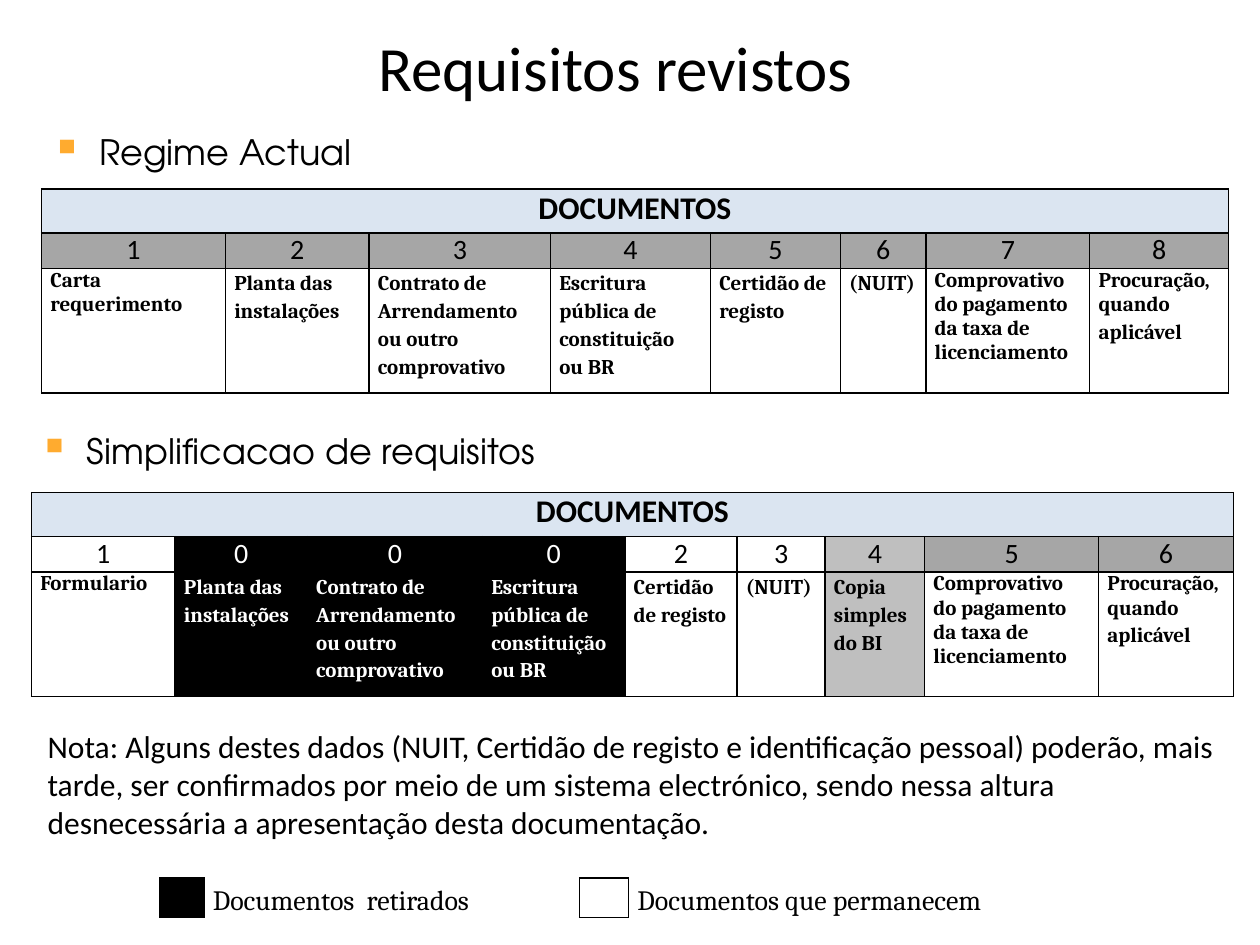
from lxml import etree
from pptx import Presentation
from pptx.dml.color import RGBColor
from pptx.enum import text as t
from pptx.oxml import ns
from pptx.util import Inches, Pt

BLACK = RGBColor(0, 0, 0)
WHITE = RGBColor(255, 255, 255)
BLUE = RGBColor(0xDB, 0xE5, 0xF1)
GRAY = RGBColor(0xA6, 0xA6, 0xA6)
PALE = RGBColor(0xBF, 0xBF, 0xBF)
AMBER = RGBColor(0xFF, 0xAB, 0x2F)
MID = t.PP_ALIGN.CENTER

PLANT = "Planta das instalações"
LEASE = "Contrato de Arrendamento ou outro comprovativo"
DEED = "Escritura pública de constituição ou BR"
CERT = "Certidão de registo"
FEE = "Comprovativo do pagamento da taxa de licenciamento"
PROXY = "Procuração, quando\naplicável"
TIGHT = ("Carta requerimento", "Formulario", FEE)

# width, number, number fill, document, document fill
OLD = [
    (1.46, "1", GRAY, "Carta requerimento", WHITE),
    (1.14, "2", GRAY, PLANT, WHITE),
    (1.44, "3", GRAY, LEASE, WHITE),
    (1.27, "4", GRAY, DEED, WHITE),
    (1.03, "5", GRAY, CERT, WHITE),
    (0.68, "6", GRAY, "(NUIT)", WHITE),
    (1.3, "7", GRAY, FEE, WHITE),
    (1.1, "8", GRAY, PROXY, WHITE),
]
NEW = [
    (1.14, "1", WHITE, "Formulario", WHITE),
    (1.05, "0", BLACK, PLANT, BLACK),
    (1.39, "0", BLACK, LEASE, BLACK),
    (1.13, "0", BLACK, DEED, BLACK),
    (0.89, "2", WHITE, CERT, WHITE),
    (0.7, "3", WHITE, "(NUIT)", WHITE),
    (0.79, "4", PALE, "Copia simples do BI", PALE),
    (1.38, "5", GRAY, FEE, WHITE),
    (1.07, "6", GRAY, PROXY, WHITE),
]
KEY = [
    (0.35, "", BLACK, "LRTB"),
    (2.98, "Documentos  retirados", WHITE, "LR"),
    (0.39, "", WHITE, "LRTB"),
    (3.64, "Documentos que permanecem", WHITE, "L"),
]
HEADS = [(0.31, 0.99, "Regime Actual"), (0.21, 3.36, "Simplificacao de requisitos")]
NOTE = (
    "Nota: Alguns destes dados (NUIT, Certidão de registo e identificação pessoal) "
    "poderão, mais tarde, ser confirmados por meio de um sistema electrónico, sendo "
    "nessa altura desnecessária a apresentação desta documentação."
)


def write(frame, words, size=18, font="Calibri", color=BLACK, bold=False,
          align=t.PP_ALIGN.LEFT, loose=False, lead=1.0):
    lines = words.split("\n")
    for i, line in enumerate(lines):
        para = frame.paragraphs[0] if i == 0 else frame.add_paragraph()
        para.alignment = align
        para.line_spacing = lead
        if loose and i == len(lines) - 1:
            para.line_spacing = 1.15
            para.space_after = Pt(10)
        run = para.add_run()
        run.text = line
        run.font.size = Pt(size)
        run.font.name = font
        run.font.bold = bold
        run.font.color.rgb = color


def add_box(slide, x, y, w, h):
    frame = slide.shapes.add_textbox(*map(Inches, (x, y, w, h))).text_frame
    frame.word_wrap = True
    return frame


def add_head(slide, x, y, words):
    frame = add_box(slide, x, y, 9.08, 0.64)
    write(frame, words, size=20, font="TeX Gyre Adventor")
    para = frame.paragraphs[0]
    para.space_before = Pt(12)
    props = para._p.get_or_add_pPr()
    props.set("marL", str(Inches(0.38)))
    props.set("indent", str(Inches(-0.44)))
    tint = etree.SubElement(props, ns.qn("a:buClr"))
    etree.SubElement(tint, ns.qn("a:srgbClr")).set("val", str(AMBER))
    etree.SubElement(props, ns.qn("a:buSzPct")).set("val", "120000")
    etree.SubElement(props, ns.qn("a:buChar")).set("char", "▪")


def add_grid(slide, x, y, wide, high):
    shape = slide.shapes.add_table(
        len(high), len(wide), *map(Inches, (x, y, sum(wide), sum(high))))
    grid = shape.table
    grid.first_row = grid.horz_banding = False
    for col, w in zip(grid.columns, wide):
        col.width = Inches(w)
    for row, h in zip(grid.rows, high):
        row.height = Inches(h)
    return grid


def dress(cell, fill, sides="LRTB"):
    cell.margin_left = cell.margin_right = Inches(0.07)
    cell.margin_top = cell.margin_bottom = 0
    cell.fill.solid()
    cell.fill.fore_color.rgb = fill
    props = cell._tc.get_or_add_tcPr()
    for i, side in enumerate("LRTB"):
        line = etree.Element(ns.qn("a:ln" + side), w=str(Pt(1)))
        if side in sides:
            paint = etree.SubElement(line, ns.qn("a:solidFill"))
            etree.SubElement(paint, ns.qn("a:srgbClr")).set("val", str(BLACK))
        else:
            etree.SubElement(line, ns.qn("a:noFill"))
        props.insert(i, line)


def add_docs(slide, x, y, docs):
    grid = add_grid(slide, x, y, [d[0] for d in docs], [0.35, 0.28, 0.99])
    for cell in grid.rows[0].cells:
        dress(cell, BLUE)
    top = grid.cell(0, 0)
    top.merge(grid.cell(0, len(docs) - 1))
    write(top.text_frame, "DOCUMENTOS", bold=True, align=MID)
    for i, (_, num, shade, words, fill) in enumerate(docs):
        ink = WHITE if fill == BLACK else BLACK
        head, body = grid.cell(1, i), grid.cell(2, i)
        dress(head, shade)
        dress(body, fill)
        write(head.text_frame, num, size=16, color=ink, align=MID)
        write(body.text_frame, words, size=12, font="Cambria", color=ink,
              bold=True, loose=words not in TIGHT)


def add_key(slide, x, y):
    grid = add_grid(slide, x, y, [k[0] for k in KEY], [0.31])
    for cell, (_, words, fill, sides) in zip(grid.rows[0].cells, KEY):
        dress(cell, fill, sides)
        cell.vertical_anchor = t.MSO_ANCHOR.BOTTOM
        if words:
            write(cell.text_frame, words, size=16, font="Cambria", lead=1.15)


def main():
    deck = Presentation()
    deck.slide_width, deck.slide_height = Inches(10), Inches(7.5)
    slide = deck.slides.add_slide(deck.slide_layouts[6])
    title = add_box(slide, 0.36, 0.18, 9.05, 0.69)
    title.vertical_anchor = t.MSO_ANCHOR.MIDDLE
    write(title, "Requisitos revistos", size=36, align=MID)
    for head in HEADS:
        add_head(slide, *head)
    add_docs(slide, 0.33, 1.5, OLD)
    add_docs(slide, 0.25, 3.91, NEW)
    write(add_box(slide, 0.28, 5.72, 9.53, 1.01), NOTE)
    add_key(slide, 1.27, 6.97)
    deck.save("out.pptx")


if __name__ == "__main__":
    main()
